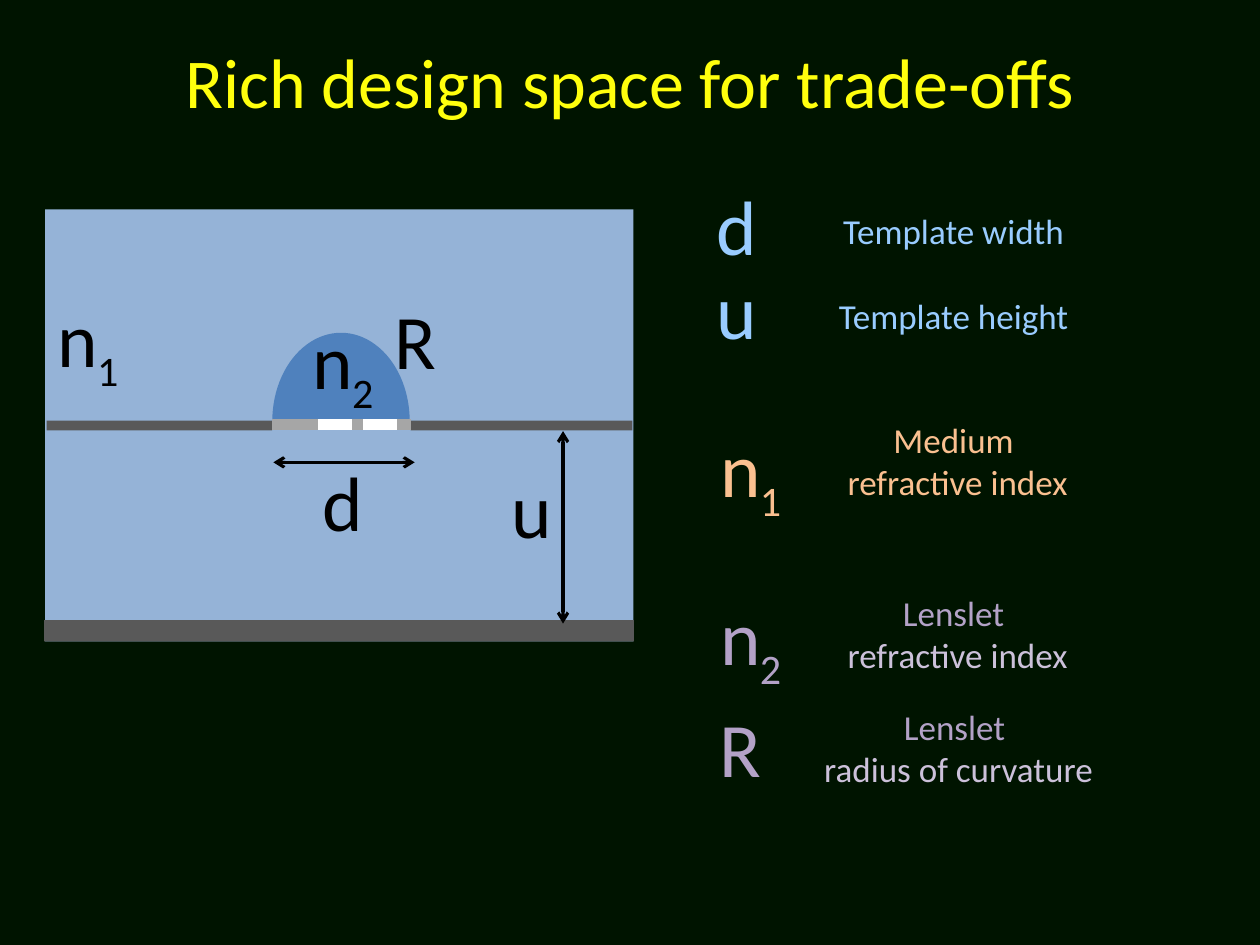
from dataclasses import dataclass

from lxml import etree
from pptx import Presentation
from pptx import util as u
from pptx.dml.color import RGBColor
from pptx.enum import dml, shapes, text
from pptx.oxml.ns import qn


@dataclass(frozen=True)
class Theme:
    font: str = "Calibri"
    night: str = "001400"
    yellow: str = "FFFF0D"
    medium: str = "95B3D7"
    lens: str = "4F81BD"
    wall: str = "595959"
    white: str = "FFFFFF"
    grey: str = "A6A6A6"
    black: str = "000000"
    sky: str = "99CCFF"
    peach: str = "FAC090"
    violet: str = "B3A2C7"
    lilac: str = "CCC1DA"
    title_size: int = 40
    symbol_size: int = 44
    index_size: int = 24
    caption_size: int = 20


class Sketch:
    def __init__(self, page, theme):
        self.page = page
        self.theme = theme
        page.background.fill.solid()
        page.background.fill.fore_color.rgb = RGBColor.from_string(theme.night)

    def style(self, para, size, color):
        for span in para.runs:
            span.font.name = self.theme.font
            span.font.size = u.Pt(size)
            span.font.color.rgb = RGBColor.from_string(color)

    def title(self, words, left, top, width, height):
        box = self.page.shapes.title
        box.left, box.top, box.width, box.height = map(u.Cm, (left, top, width, height))
        frame = box.text_frame
        frame.text = words
        frame.vertical_anchor = text.MSO_ANCHOR.MIDDLE
        frame.paragraphs[0].alignment = text.PP_ALIGN.CENTER
        self.style(frame.paragraphs[0], self.theme.title_size, self.theme.yellow)

    def shape(self, kind, color, left, top, width, height):
        shape = self.page.shapes.add_shape(kind, *map(u.Cm, (left, top, width, height)))
        shape.shadow.inherit = False
        shape.fill.solid()
        shape.fill.fore_color.rgb = RGBColor.from_string(color)
        shape.line.fill.background()
        return shape

    def line(self, start, end, color, weight):
        line = self.page.shapes.add_connector(
            shapes.MSO_CONNECTOR.STRAIGHT, *map(u.Cm, (*start, *end)))
        line.line.color.rgb = RGBColor.from_string(color)
        line.line.width = u.Pt(weight)
        etree.SubElement(line._element.spPr, qn("a:effectLst"))
        return line

    def measure(self, start, end):
        line = self.line(start, end, self.theme.black, 1.75)
        for tip in ("a:headEnd", "a:tailEnd"):
            etree.SubElement(line.line._get_or_add_ln(), qn(tip), type="arrow")

    def label(self, words, size, color, left, top, width, height):
        box = self.page.shapes.add_textbox(*map(u.Cm, (left, top, width, height)))
        frame = box.text_frame
        frame.text = words
        frame.word_wrap = False
        frame.auto_size = text.MSO_AUTO_SIZE.SHAPE_TO_FIT_TEXT
        self.style(frame.paragraphs[0], size, color)

    def symbol(self, name, color, left, top):
        letter, index = name[0], name[1:]
        self.label(letter, self.theme.symbol_size, color, left, top, 1.35, 2.13)
        if index:
            self.label(index, self.theme.index_size, color, left + 0.8, top + 1.09, 0.94, 1.27)

    def caption(self, lines, left, top, width):
        height = 0.27 + 0.85 * len(lines)
        box = self.page.shapes.add_textbox(*map(u.Cm, (left, top, width, height)))
        frame = box.text_frame
        frame.text = "\n".join(words for words, color in lines)
        frame.word_wrap = True
        frame.auto_size = text.MSO_AUTO_SIZE.SHAPE_TO_FIT_TEXT
        for para, (words, color) in zip(frame.paragraphs, lines):
            para.alignment = text.PP_ALIGN.CENTER
            self.style(para, self.theme.caption_size, color)


def draw_lenslet(sketch):
    theme = sketch.theme
    rectangle = shapes.MSO_SHAPE.RECTANGLE
    sketch.shape(rectangle, theme.medium, 0.91, 4.22, 11.86, 8.71)
    lens = sketch.shape(shapes.MSO_SHAPE.PIE, theme.lens, 5.49, 6.71, 2.77, 3.56)
    lens.adjustments[0], lens.adjustments[1] = 108.2, 216
    for left, top, width, height in (
        (0.89, 12.5, 11.89, 0.43),
        (0.94, 8.48, 4.55, 0.2),
        (8.28, 8.48, 4.47, 0.2),
    ):
        sketch.shape(rectangle, theme.wall, left, top, width, height)

    slot = (5.49, 8.56), (8.28, 8.56)
    sketch.line(*slot, theme.white, 6.5)
    template = sketch.line(*slot, theme.grey, 6.5)
    template.line.dash_style = dml.MSO_LINE.DASH_DOT

    sketch.measure((5.51, 9.32), (8.36, 9.32))
    sketch.measure((11.35, 8.69), (11.35, 12.57))
    for name, left, top in (
        ("n1", 0.91, 5.74),
        ("n2", 6.05, 6.17),
        ("R", 7.7, 5.77),
        ("d", 6.25, 9.04),
        ("u", 10.06, 9.17),
    ):
        sketch.symbol(name, theme.black, left, top)


def draw_legend(sketch):
    theme = sketch.theme
    for name, color, left, top in (
        ("d", theme.sky, 14.2, 3.48),
        ("u", theme.sky, 14.2, 5.16),
        ("n1", theme.peach, 14.27, 8.36),
        ("n2", theme.violet, 14.27, 11.73),
        ("R", theme.violet, 14.25, 14),
    ):
        sketch.symbol(name, color, left, top)

    lenslet = ("Lenslet ", theme.violet)
    for lines, left, top, width in (
        ([("Template width", theme.sky)], 16.28, 4.09, 5.89),
        ([("Template height", theme.sky)], 16.28, 5.82, 5.89),
        ([("Medium ", theme.peach), ("refractive index", theme.peach)], 16.36, 8.31, 5.89),
        ([lenslet, ("refractive index", theme.lilac)], 16.36, 11.79, 5.89),
        ([lenslet, ("radius of curvature", theme.lilac)], 16, 14.1, 6.65),
    ):
        sketch.caption(lines, left, top, width)


def main():
    deck = Presentation()
    deck.slide_width, deck.slide_height = u.Cm(25.4), u.Cm(19.05)
    page = deck.slides.add_slide(deck.slide_layouts.get_by_name("Title Only"))
    sketch = Sketch(page, Theme())
    sketch.title("Rich design space for trade-offs", 0, 0.03, 25.4, 3.18)
    draw_lenslet(sketch)
    draw_legend(sketch)
    deck.save("out.pptx")


if __name__ == "__main__":
    main()
